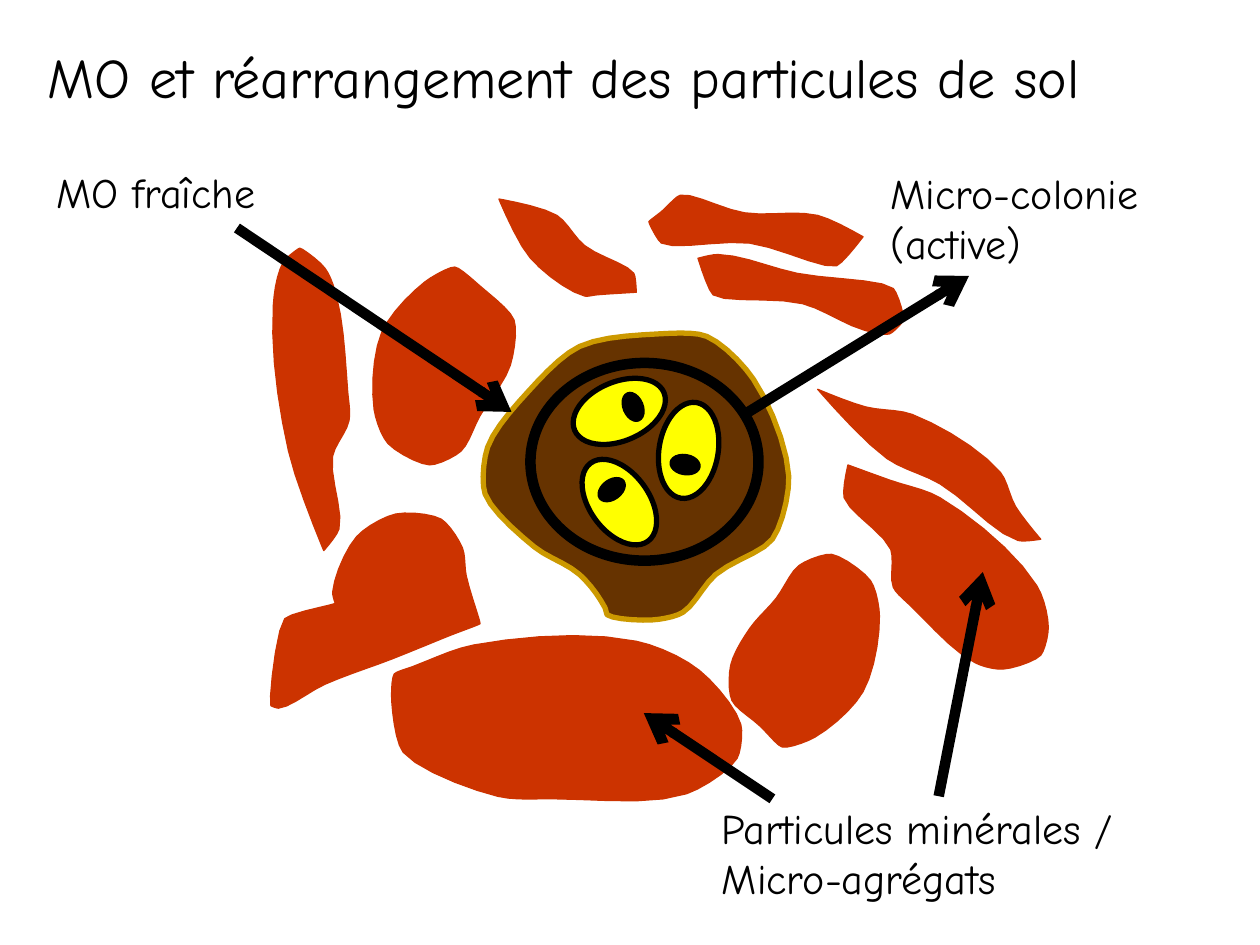
from math import cos, radians, sin

from lxml import etree
from pptx import Presentation
from pptx.dml.color import RGBColor
from pptx.enum.shapes import MSO_CONNECTOR, MSO_SHAPE
from pptx.enum.text import MSO_ANCHOR
from pptx.oxml.ns import qn
from pptx.util import Pt

FONT = "Comic Neue"
COLORS = {"text": "000000", "ink": "000000", "particle": "CC3300",
          "organic": "663300", "organic_edge": "CC9900", "cell": "FFFF00"}
UNIT = 0.72  # points per outline unit
STEPS = 5    # segments per curve

ORGANIC_MATTER = [
    (480, 482), (460, 456), (424, 434), (385, 392), (387, 355), (419, 311), (460, 275),
    (523, 265), (561, 267), (598, 301), (626, 378), (613, 428), (568, 456), (542, 486),
    (518, 492), (482, 488)]
PARTICLES = [
    [(396, 158), (442, 171), (464, 195), (503, 217), (505, 232), (474, 234), (464, 235),
     (421, 205)],
    [(649, 309), (687, 323), (724, 329), (794, 375), (806, 402), (826, 428), (808, 429),
     (746, 384), (704, 364)],
    [(515, 176), (525, 168), (540, 155), (591, 169), (649, 171), (685, 188), (664, 211),
     (595, 193), (525, 193)],
    [(554, 205), (570, 202), (633, 217), (709, 229), (717, 254), (706, 265), (686, 262),
     (637, 241), (566, 234)],
    [(313, 535), (328, 529), (376, 512), (505, 509), (555, 532), (588, 575), (585, 602),
     (545, 630), (438, 634), (395, 632), (320, 597), (311, 557)],
    [(266, 479), (226, 491), (215, 560), (221, 562), (258, 543), (311, 523), (358, 504),
     (381, 495), (370, 457), (367, 435), (350, 412), (314, 408), (283, 426), (264, 470)],
    [(691, 461), (698, 489), (685, 549), (647, 585), (621, 593), (603, 576), (581, 556),
     (580, 528), (595, 499), (616, 475), (634, 449), (660, 440)],
    [(673, 369), (706, 381), (746, 395), (823, 465), (832, 498), (826, 520), (796, 531),
     (774, 526), (723, 481), (709, 466), (707, 436), (670, 395)],
    [(308, 352), (297, 325), (303, 264), (337, 224), (361, 212), (381, 227), (408, 254),
     (405, 290), (381, 330), (366, 358), (341, 369)],
    [(276, 311), (277, 334), (264, 362), (269, 420), (257, 437), (229, 358), (217, 242),
     (225, 208), (238, 197), (258, 213), (267, 235)]]


def rgb(name):
    return RGBColor.from_string(COLORS[name])


def paint(sp, fill, line, width):
    sp.shadow.inherit = False
    if fill:
        sp.fill.solid()
        sp.fill.fore_color.rgb = rgb(fill)
    else:
        sp.fill.background()
    sp.line.color.rgb = rgb(line)
    sp.line.width = Pt(width)


def unit(z):
    return z / abs(z)


def smooth(outline):
    """Round a closed outline through its knots, leaving sharp corners sharp."""
    knots = [complex(x, y) for x, y in outline]
    count = len(knots)
    tangents = []
    for i, knot in enumerate(knots):
        before = unit(knot - knots[i - 1])
        after = unit(knots[(i + 1) % count] - knot)
        straightness = max(0, (before * after.conjugate()).real)
        tangents.append(straightness * unit(before + after))
    points = []
    for i, start in enumerate(knots):
        j = (i + 1) % count
        end = knots[j]
        reach = abs(end - start) / 3
        c1, c2 = start + reach * tangents[i], end - reach * tangents[j]
        for step in range(STEPS):
            t = step / STEPS
            u = 1 - t
            points.append(u ** 3 * start + 3 * t * u * u * c1 + 3 * t * t * u * c2 + t ** 3 * end)
    return [(Pt(z.real * UNIT), Pt(z.imag * UNIT)) for z in points]


def add_outline(s, outline, left, top, fill, line, width):
    points = smooth(outline)
    builder = s.shapes.build_freeform(*points[0])
    builder.add_line_segments(points[1:], close=True)
    paint(builder.convert_to_shape(Pt(left), Pt(top)), fill, line, width)


def add_ellipse(shapes, cx, cy, w, h, fill, width, angle=0):
    sp = shapes.add_shape(MSO_SHAPE.OVAL, Pt(cx - w / 2), Pt(cy - h / 2), Pt(w), Pt(h))
    sp.rotation = angle
    paint(sp, fill, "ink", width)


def add_colony(s, left, top, w, h):
    """Three cells with their nuclei inside a ring."""
    for x, y, angle in ((50.8, 27.7, 337.2), (90.4, 50, 99.3), (50.8, 79.5, 233.7)):
        cx, cy, turn = left + x, top + y, radians(angle)
        cell = s.shapes.add_group_shape().shapes
        add_ellipse(cell, cx, cy, 55.4, 33.8, "cell", 3, angle)
        add_ellipse(cell, cx + 8.3 * cos(turn) - 0.7 * sin(turn),
                    cy + 8.3 * sin(turn) + 0.7 * cos(turn), 11.5, 17.3, "ink", 0.75, angle)
    add_ellipse(s.shapes, left + w / 2, top + h / 2, w, h, None, 6)


def add_arrow(s, x1, y1, x2, y2):
    cn = s.shapes.add_connector(MSO_CONNECTOR.STRAIGHT, Pt(x1), Pt(y1), Pt(x2), Pt(y2))
    cn.line.color.rgb = rgb("ink")
    cn.line.width = Pt(6)
    sp_pr = cn._element.spPr
    etree.SubElement(sp_pr.find(qn("a:ln")), qn("a:tailEnd"), type="arrow")
    etree.SubElement(sp_pr, qn("a:effectLst"))


def add_text(s, left, top, w, h, lines, size=24, wrap=False, anchor=MSO_ANCHOR.TOP):
    tf = s.shapes.add_textbox(Pt(left), Pt(top), Pt(w), Pt(h)).text_frame
    tf.word_wrap = wrap
    tf.vertical_anchor = anchor
    for i, line in enumerate(lines):
        p = tf.paragraphs[0] if i == 0 else tf.add_paragraph()
        r = p.add_run()
        r.text = line
        r.font.name, r.font.size = FONT, Pt(size)
        r.font.color.rgb = rgb("text")


def add_aggregate(s, left, top):
    """Organic matter with its colony, ringed by mineral particles and labelled."""
    add_outline(s, ORGANIC_MATTER, left, top, "organic", "organic_edge", 3)
    add_colony(s, left + 303.1, top + 207.4, 130.3, 113)
    for outline in PARTICLES:
        add_outline(s, outline, left, top, "particle", "particle", 0.75)
    for x1, y1, x2, y2 in ((536.4, 455, 561.6, 326.9), (441.4, 456.5, 367.9, 407.5),
                           (427.7, 235.4, 553.7, 157.7), (135.4, 130.3, 292.3, 235.4)):
        add_arrow(s, left + x1, top + y1, left + x2, top + y2)
    add_text(s, left + 501.8, top + 92.2, 215.3, 65.5, ["Micro-colonie (active)"], wrap=True)
    add_text(s, left + 405.4, top + 455, 267.1, 65.5,
             ["Particules minérales /", "Micro-agrégats"])
    add_text(s, left + 25.2, top + 91.4, 145.4, 36, ["MO fraîche"])


def main():
    prs = Presentation()
    prs.slide_width, prs.slide_height = Pt(720), Pt(540)
    s = prs.slides.add_slide(prs.slide_layouts[6])
    add_text(s, 20.2, 20.9, 671, 45.4, ["MO et réarrangement des particules de sol"],
             size=32, wrap=True, anchor=MSO_ANCHOR.MIDDLE)
    add_aggregate(s, 0, 0)
    prs.save("out.pptx")


if __name__ == "__main__":
    main()
